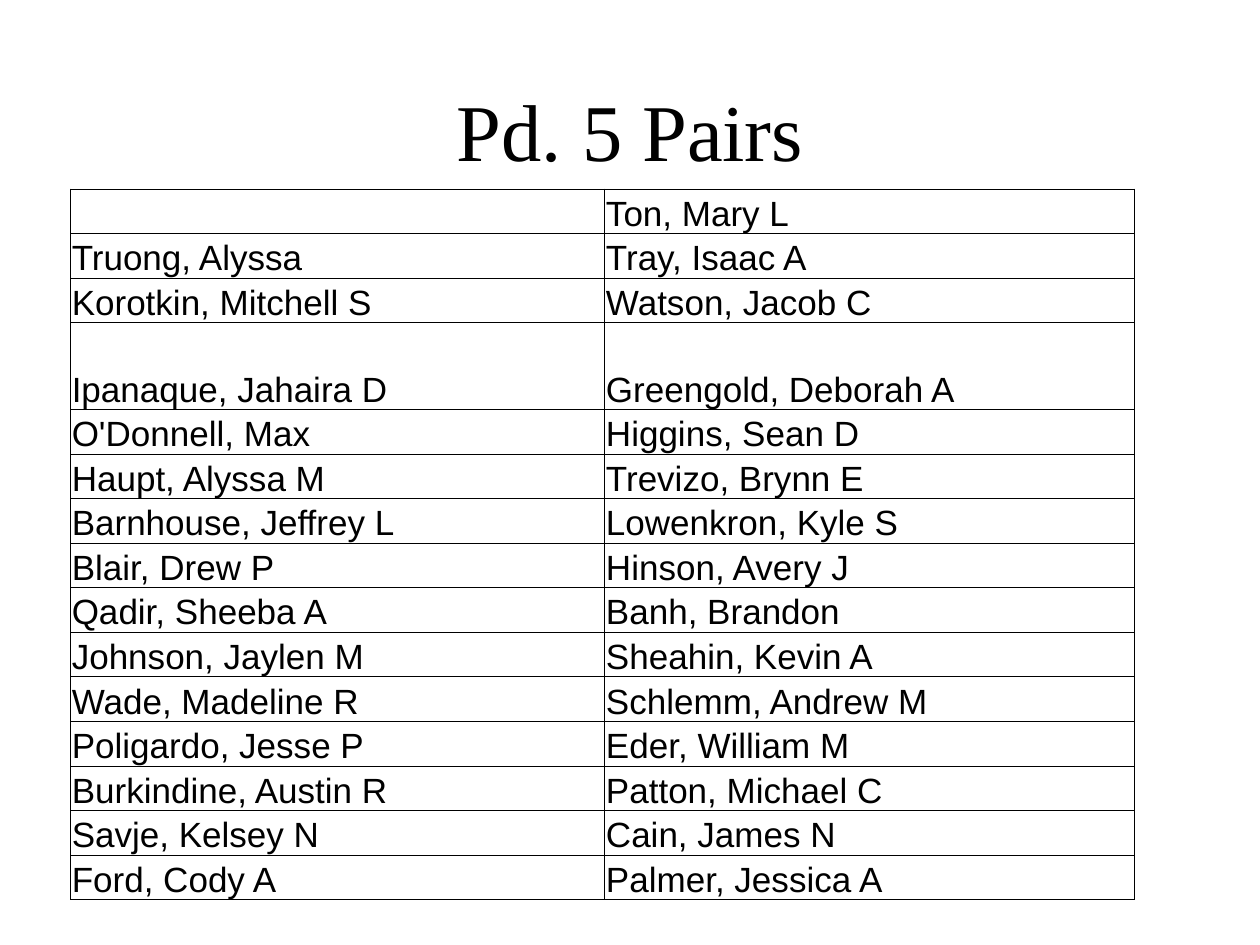
from dataclasses import dataclass

from lxml import etree
from pptx import Presentation
from pptx import util as u
from pptx.dml.color import RGBColor
from pptx.enum import text
from pptx.oxml import ns


@dataclass(frozen=True)
class Theme:
    ink: str = "000000"
    paper: str = "FFFFFF"
    title_font: str = "Times New Roman"
    title_size: float = 46
    name_font: str = "Arial"
    name_size: float = 20
    rule_width: float = 0.5


class PairsSlide:
    """Holds the theme and the current slide, and draws its elements."""

    def __init__(self, deck, theme):
        self.theme = theme
        self.slide = deck.slides.add_slide(deck.slide_layouts[5])

    def style(self, paragraph, family, size):
        font = paragraph.font
        font.name, font.size = family, u.Pt(size)
        font.color.rgb = RGBColor.from_string(self.theme.ink)

    def title(self, wording, left, top, width, height):
        heading = self.slide.shapes.title
        heading.left, heading.top = u.Inches(left), u.Inches(top)
        heading.width, heading.height = u.Inches(width), u.Inches(height)
        frame = heading.text_frame
        frame.text = wording
        frame.vertical_anchor = text.MSO_ANCHOR.MIDDLE
        paragraph = frame.paragraphs[0]
        paragraph.alignment = text.PP_ALIGN.CENTER
        self.style(paragraph, self.theme.title_font, self.theme.title_size)

    def borders(self, cell):
        properties = cell._tc.get_or_add_tcPr()
        for side in ("a:lnL", "a:lnR", "a:lnT", "a:lnB"):
            line = etree.SubElement(properties, ns.qn(side), w=str(u.Pt(self.theme.rule_width)))
            fill = etree.SubElement(line, ns.qn("a:solidFill"))
            etree.SubElement(fill, ns.qn("a:srgbClr"), val=self.theme.ink)

    def cell(self, cell, name):
        cell.margin_left = cell.margin_right = cell.margin_top = u.Inches(0.01)
        cell.margin_bottom = 0
        cell.vertical_anchor = text.MSO_ANCHOR.BOTTOM
        self.borders(cell)
        if name:
            cell.text = name
            cell.fill.solid()
            cell.fill.fore_color.rgb = RGBColor.from_string(self.theme.paper)
        else:
            cell.fill.background()
        self.style(cell.text_frame.paragraphs[0], self.theme.name_font, self.theme.name_size)

    def table(self, pairs, left, top, widths, heights):
        grid = self.slide.shapes.add_table(
            len(pairs), len(widths), u.Inches(left), u.Inches(top),
            u.Inches(sum(widths)), u.Inches(sum(heights))).table
        grid.first_row = grid.horz_banding = False
        for column, width in zip(grid.columns, widths):
            column.width = u.Inches(width)
        for row, height, pair in zip(grid.rows, heights, pairs):
            row.height = u.Inches(height)
            for cell, name in zip(row.cells, pair):
                self.cell(cell, name)


PAIRS = [
    ("", "Ton, Mary L"),
    ("Truong, Alyssa", "Tray, Isaac A"),
    ("Korotkin, Mitchell S", "Watson, Jacob C"),
    ("Ipanaque, Jahaira D", "Greengold, Deborah A"),
    ("O'Donnell, Max", "Higgins, Sean D"),
    ("Haupt, Alyssa M", "Trevizo, Brynn E"),
    ("Barnhouse, Jeffrey L", "Lowenkron, Kyle S"),
    ("Blair, Drew P", "Hinson, Avery J"),
    ("Qadir, Sheeba A", "Banh, Brandon"),
    ("Johnson, Jaylen M", "Sheahin, Kevin A"),
    ("Wade, Madeline R", "Schlemm, Andrew M"),
    ("Poligardo, Jesse P", "Eder, William M"),
    ("Burkindine, Austin R", "Patton, Michael C"),
    ("Savje, Kelsey N", "Cain, James N"),
    ("Ford, Cody A", "Palmer, Jessica A"),
]
TABLE_HEIGHT = 5.64
TALL_ROW, TALL_HEIGHT = 3, 0.69


def main():
    deck = Presentation()
    deck.slide_width, deck.slide_height = u.Inches(10), u.Inches(7.5)
    page = PairsSlide(deck, Theme())
    page.title("Pd. 5 Pairs", 1, 0.55, 8, 0.95)
    row_height = (TABLE_HEIGHT - TALL_HEIGHT) / (len(PAIRS) - 1)
    heights = [TALL_HEIGHT if i == TALL_ROW else row_height for i in range(len(PAIRS))]
    page.table(PAIRS, 0.56, 1.5, (4.24, 4.2), heights)
    deck.save("out.pptx")


if __name__ == "__main__":
    main()
